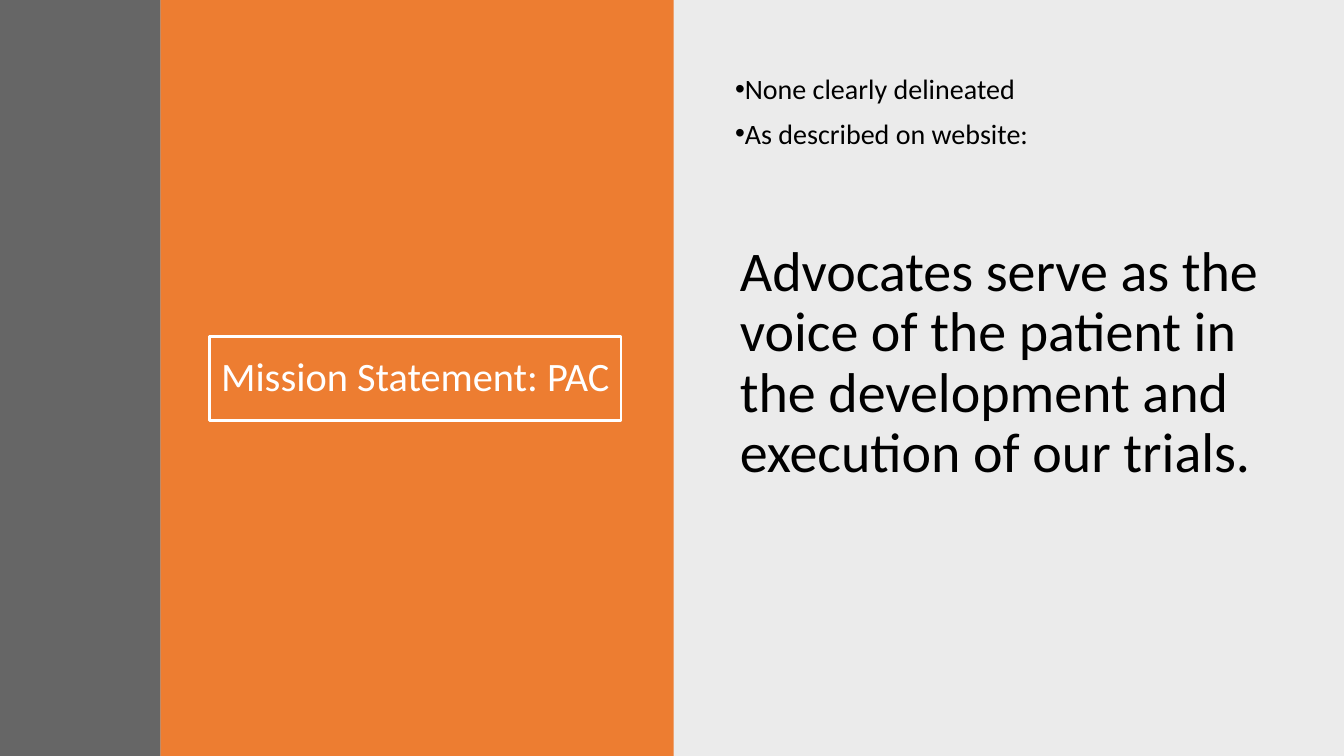
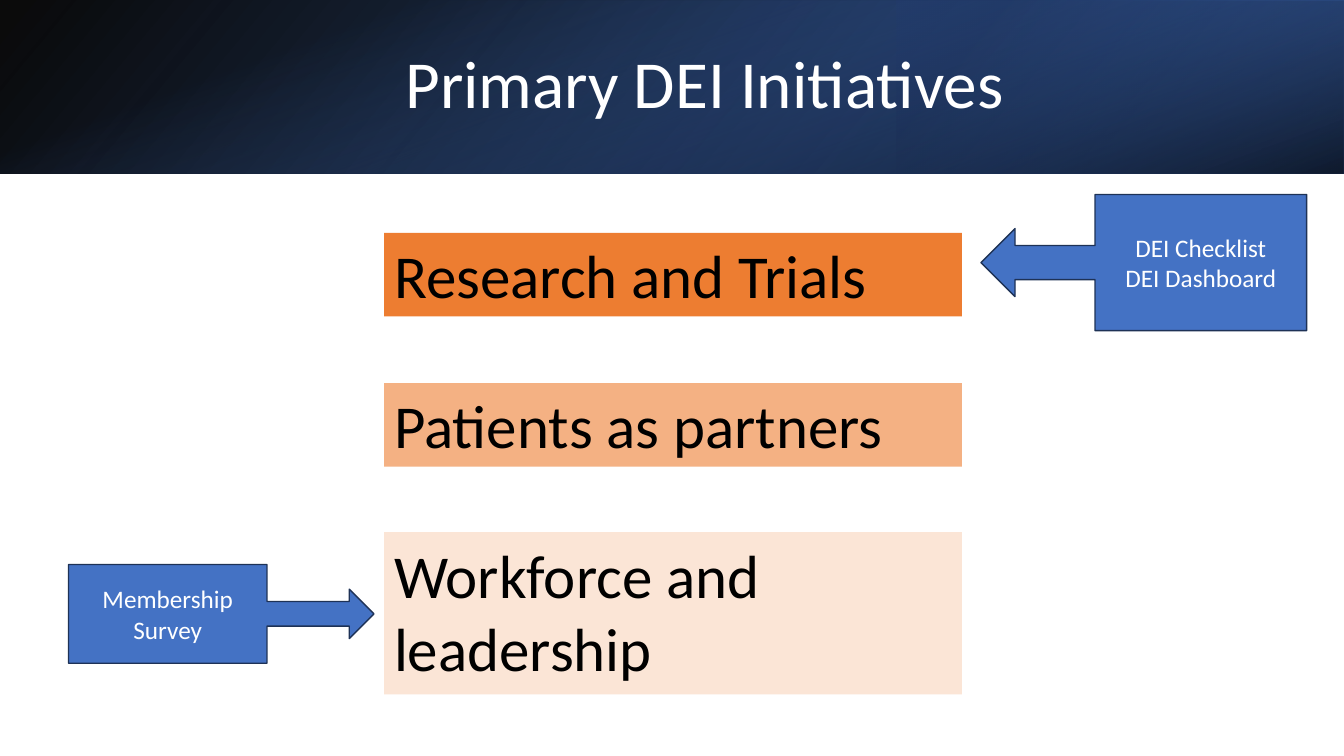
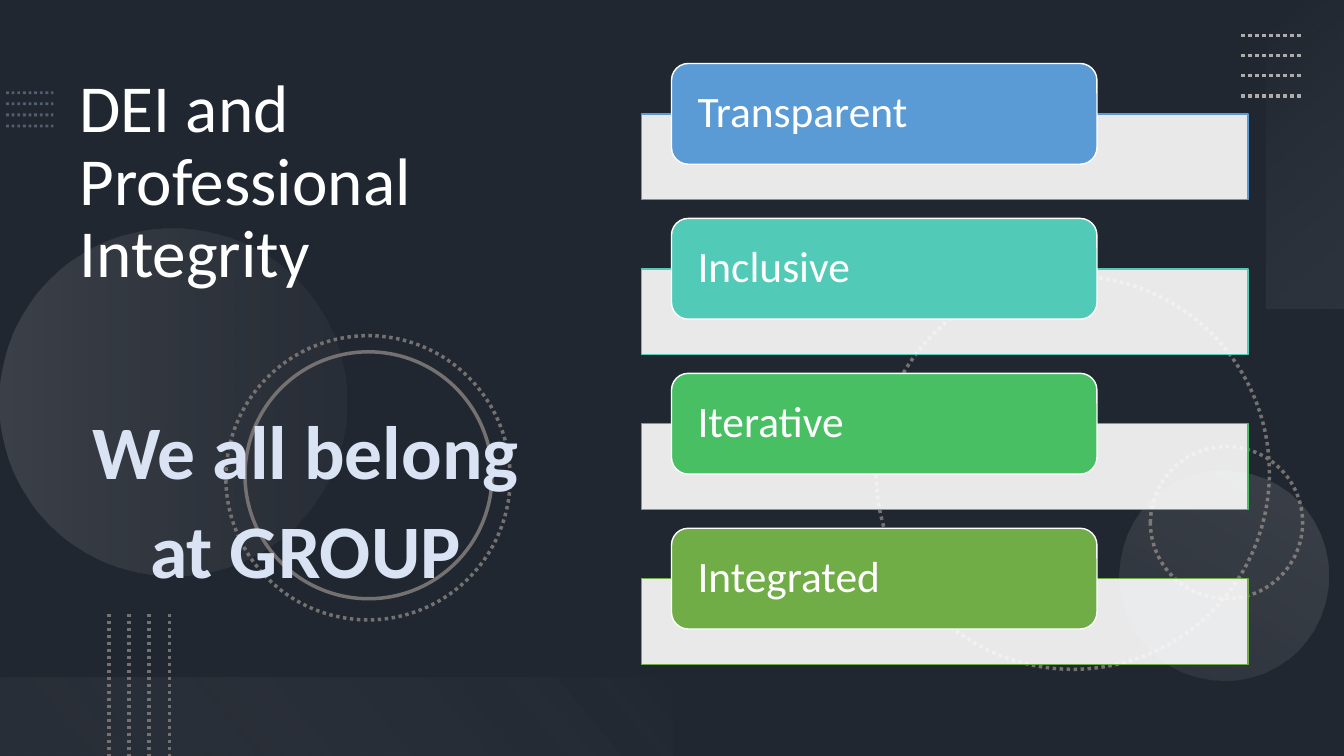
from pptx import Presentation
from pptx.dml.color import RGBColor
from pptx.enum.dml import MSO_LINE
from pptx.enum.shapes import MSO_CONNECTOR, MSO_SHAPE
from pptx.enum.text import MSO_ANCHOR, MSO_AUTO_SIZE, PP_ALIGN
from pptx.oxml.ns import qn
from pptx.util import Inches, Pt
from lxml import etree

RECTANGLE = MSO_SHAPE.RECTANGLE
ROUNDED = MSO_SHAPE.ROUNDED_RECTANGLE
OVAL = MSO_SHAPE.OVAL
LEFT_CALLOUT = MSO_SHAPE.LEFT_ARROW_CALLOUT
RIGHT_CALLOUT = MSO_SHAPE.RIGHT_ARROW_CALLOUT
DOTTED = MSO_LINE.ROUND_DOT
CENTER = PP_ALIGN.CENTER
LEFT = PP_ALIGN.LEFT
TOP = MSO_ANCHOR.TOP
MIDDLE = MSO_ANCHOR.MIDDLE

FONT = "Calibri"
WIDTH, HEIGHT = 13.33, 7.5
TITLE_AND_CONTENT, TITLE_ONLY = 1, 5

COLORS = {
    "black": "000000",
    "white": "FFFFFF",
    "charcoal": "404040",
    "orange": "ED7D31",
    "light orange": "F4B183",
    "pale orange": "FBE5D6",
    "blue": "4472C4",
    "dark blue": "2F5597",
    "navy": "203864",
    "callout edge": "1E3256",
    "pale blue": "DAE3F3",
    "slate": "44546A",
    "light slate": "8497B0",
    "gray": "767171",
    "light gray": "AFABAB",
    "mist": "F5F5F5",
    "sky": "5B9BD5",
    "teal": "52CAB8",
    "green": "49BF64",
    "olive": "70AD47",
}


def rgb(name):
    return RGBColor.from_string(COLORS[name])


def set_alphas(shape, alphas):
    """Give each colour already set on the shape its opacity in percent."""
    colors = list(shape.element.spPr.iter(qn("a:srgbClr")))
    for color, alpha in zip(colors, alphas):
        etree.SubElement(color, qn("a:alpha"), val=str(alpha * 1000))


def set_line(shape, color, width, dash=None):
    shape.line.color.rgb = rgb(color)
    shape.line.width = Pt(width)
    if dash is not None:
        shape.line.dash_style = dash


def add_box(slide, kind, box, fill=None, alpha=100, line=None, dash=None):
    """Add a preset shape; line is a (colour, width) pair."""
    shape = slide.shapes.add_shape(kind, *map(Inches, box))
    shape.shadow.inherit = False
    if fill:
        shape.fill.solid()
        shape.fill.fore_color.rgb = rgb(fill)
        if alpha < 100:
            set_alphas(shape, [alpha])
    else:
        shape.fill.background()
    if line:
        set_line(shape, *line, dash)
    else:
        shape.line.fill.background()
    return shape


def add_gradient(slide, kind, box, stops, angle, rotation=0, flip=False):
    """Add a shape with two (percent, colour, opacity) stops and a clockwise angle."""
    shape = add_box(slide, kind, box)
    shape.fill.gradient()
    shape.fill.gradient_angle = 360 - angle
    for stop, (position, color, _) in zip(shape.fill.gradient_stops, stops):
        stop.position = position / 100
        stop.color.rgb = rgb(color)
    set_alphas(shape, [alpha for _, _, alpha in stops])
    shape.rotation = rotation
    if flip:
        shape.element.spPr.find(qn("a:xfrm")).set("flipH", "1")


def add_dotted_lines(slide, start, end, step, color, width, alpha=100):
    """Add four parallel dotted lines, each shifted from the last by step."""
    for index in range(4):
        shift_x, shift_y = step[0] * index, step[1] * index
        line = slide.shapes.add_connector(
            MSO_CONNECTOR.STRAIGHT,
            Inches(start[0] + shift_x), Inches(start[1] + shift_y),
            Inches(end[0] + shift_x), Inches(end[1] + shift_y))
        set_line(line, color, width, DOTTED)
        if alpha < 100:
            set_alphas(line, [alpha])
        etree.SubElement(line.element.spPr, qn("a:effectLst"))


def write_text(shape, lines, size, color, align=LEFT, anchor=TOP,
               spacing=1.0, before=0, after=0, bold=False):
    frame = shape.text_frame
    frame.word_wrap = True
    frame.auto_size = MSO_AUTO_SIZE.NONE
    frame.vertical_anchor = anchor
    frame.text = "\n".join(lines)
    for paragraph in frame.paragraphs:
        paragraph.alignment = align
        paragraph.line_spacing = spacing
        paragraph.space_before = Pt(before)
        paragraph.space_after = Pt(after)
        font = paragraph.font
        font.name, font.size, font.bold = FONT, Pt(size), bold
        font.color.rgb = rgb(color)


def add_text(slide, box, lines, size, color, **style):
    shape = slide.shapes.add_textbox(*map(Inches, box))
    write_text(shape, lines, size, color, **style)


def place(placeholder, box):
    """Move a placeholder to its box and in front of the shapes drawn so far."""
    placeholder.left, placeholder.top, placeholder.width, placeholder.height = map(Inches, box)
    placeholder.element.getparent().append(placeholder.element)


def set_title(slide, box, text, size, **style):
    title = slide.shapes.title
    place(title, box)
    write_text(title, [text], size, "white", spacing=0.9, **style)
    return title


def add_bullets(slide, box, lines):
    body = slide.placeholders[1]
    place(body, box)
    write_text(body, lines, 20, "black", spacing=0.9, before=10)
    for paragraph in body.text_frame.paragraphs:
        properties = paragraph._p.get_or_add_pPr()
        properties.set("marL", "0")
        properties.set("indent", str(-Inches(0.25)))


def add_slide(presentation, layout, background="white"):
    slide = presentation.slides.add_slide(presentation.slide_layouts[layout])
    slide.background.fill.solid()
    slide.background.fill.fore_color.rgb = rgb(background)
    return slide


def build_mission(presentation):
    slide = add_slide(presentation, TITLE_AND_CONTENT)
    add_box(slide, RECTANGLE, (6.67, 0, 6.67, HEIGHT), "black", 8)
    add_box(slide, RECTANGLE, (1.59, 0, 5.09, HEIGHT), "orange")
    title = set_title(slide, (2.08, 3.34, 4.08, 0.83), "Mission Statement: PAC",
                      28.8, align=CENTER, anchor=MIDDLE)
    set_line(title, "white", 2)
    add_box(slide, RECTANGLE, (0, 0, 1.59, HEIGHT), "charcoal", 80)
    add_bullets(slide, (7.19, 0.7, 5.53, 2.79),
                ["None clearly delineated", "As described on website:"])
    add_text(slide, (7.24, 2.36, 5.53, 2.79),
             ["Advocates serve as the voice of the patient in the development "
              "and execution of our trials."],
             40, "black", spacing=0.9, after=6)


def build_initiatives(presentation):
    slide = add_slide(presentation, TITLE_ONLY)
    band = 1.72
    add_gradient(slide, RECTANGLE, (0, 0, WIDTH, band),
                 [(0, "black", 96), (100, "dark blue", 100)], 140, flip=True)
    add_gradient(slide, RECTANGLE, (8.89, 0, 4.44, band),
                 [(19, "navy", 68), (100, "blue", 79)], 320, rotation=180, flip=True)
    add_gradient(slide, RECTANGLE, (5.8, -5.8, band, WIDTH),
                 [(23, "blue", 0), (99, "black", 74)], 340, rotation=90)
    set_title(slide, (1.5, 0.38, 10.98, 0.96), "Primary DEI Initiatives", 48,
              align=CENTER, anchor=MIDDLE)

    initiatives = [
        ("Research and Trials", 2.31, 0.83, "orange"),
        ("Patients as partners", 3.8, 0.83, "light orange"),
        ("Workforce and leadership", 5.28, 1.61, "pale orange"),
    ]
    for text, top, height, color in initiatives:
        bar = add_box(slide, RECTANGLE, (3.81, top, 5.73, height), color)
        write_text(bar, [text], 43.5, "black", after=6)

    callouts = [
        (LEFT_CALLOUT, (9.73, 1.93, 3.23, 1.35), ["DEI Checklist", "DEI Dashboard"]),
        (RIGHT_CALLOUT, (0.68, 5.6, 3.03, 0.98), ["Membership", "Survey"]),
    ]
    for kind, box, lines in callouts:
        callout = add_box(slide, kind, box, "blue", line=("callout edge", 1))
        write_text(callout, lines, 18, "white", align=CENTER, anchor=MIDDLE)


def add_backdrop(slide):
    """Draw the dark overlay with its circles, corner panels and dotted lines."""
    add_box(slide, RECTANGLE, (0, 0, WIDTH, HEIGHT), "black", 53)
    add_dotted_lines(slide, (0.06, 0.92), (0.53, 0.92), (0, 0.11), "light slate", 2, 50)

    def add_ring(left, top, size, dash=DOTTED):
        add_box(slide, OVAL, (left, top, size, size), line=("gray", 2.5), dash=dash)

    add_ring(8.69, 2.74, 3.9)
    add_ring(11.41, 4.43, 1.51)
    add_gradient(slide, OVAL, (0, 2.27, 3.44, 3.44),
                 [(0, "light gray", 20), (100, "gray", 10)], 90, rotation=270)
    add_gradient(slide, OVAL, (11.1, 4.67, 2.08, 2.08),
                 [(0, "light gray", 10), (100, "light gray", 20)], 90, rotation=210)
    add_ring(2.24, 3.33, 2.82)
    add_ring(2.43, 3.49, 2.45, dash=None)

    add_gradient(slide, RECTANGLE, (11.42, 1.14, 3.06, 0.78),
                 [(0, "mist", 0), (100, "light gray", 10)], 140, rotation=270)
    add_dotted_lines(slide, (12.31, 0.35), (12.91, 0.35), (0, 0.2), "light gray", 2.5)
    add_gradient(slide, RECTANGLE, (0, 6.72, 6.67, 0.78),
                 [(10, "gray", 10), (100, "mist", 0)], 140, rotation=180)
    add_dotted_lines(slide, (1.08, 6.09), (1.08, HEIGHT), (0.2, 0), "gray", 2.5)


def build_integrity(presentation):
    slide = add_slide(presentation, TITLE_ONLY, "slate")
    add_backdrop(slide)
    set_title(slide, (0.69, 0.69, 5.41, 6.03), "DEI and Professional Integrity", 48)
    add_text(slide, (0.73, 3.96, 4.6, 2), ["We all belong", "at GROUP"],
             54, "pale blue", align=CENTER, after=6, bold=True)

    values = [("Transparent", "sky"), ("Inclusive", "teal"),
              ("Iterative", "green"), ("Integrated", "olive")]
    for index, (text, color) in enumerate(values):
        top = 0.63 + 1.537 * index
        add_box(slide, RECTANGLE, (6.36, top + 0.5, 6.02, 0.85), "white", 90,
                line=(color, 1))
        label = add_box(slide, ROUNDED, (6.66, top, 4.22, 1), color, line=("white", 1))
        label.text_frame.margin_left = Inches(0.21)
        write_text(label, [text], 31, "white", anchor=MIDDLE, spacing=0.9)


def main():
    presentation = Presentation()
    presentation.slide_width = Inches(WIDTH)
    presentation.slide_height = Inches(HEIGHT)
    build_mission(presentation)
    build_initiatives(presentation)
    build_integrity(presentation)
    presentation.save("out.pptx")


if __name__ == "__main__":
    main()
